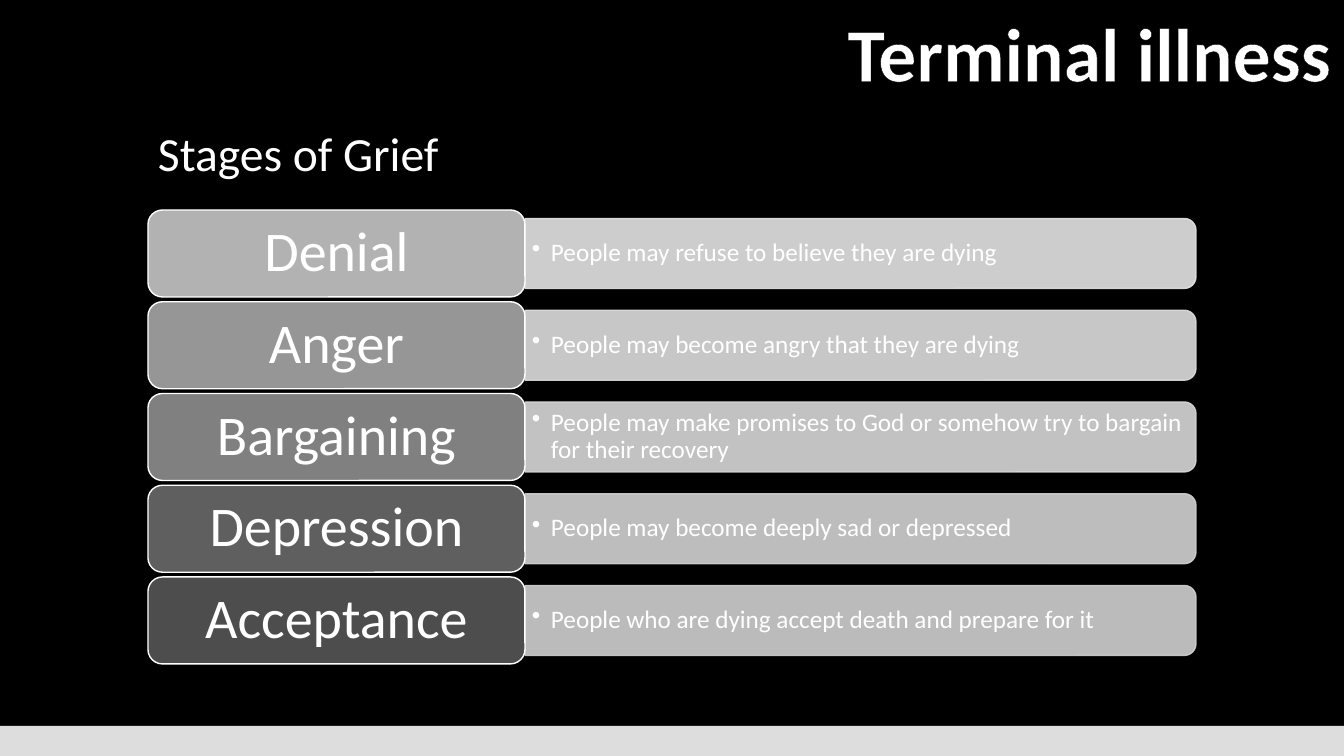
"""Build a slide listing the five stages of grief."""
from lxml import etree
from pptx import Presentation
from pptx.dml.color import RGBColor
from pptx.enum.shapes import MSO_SHAPE
from pptx.enum.text import MSO_ANCHOR, MSO_AUTO_SIZE, PP_ALIGN
from pptx.oxml.ns import qn
from pptx.util import Pt

TITLE = "Terminal illness"
SUBTITLE = "Stages of Grief"
STAGES = [
    ("Denial", "People may refuse to believe they are dying", "B2B2B2", "E4E4E4"),
    ("Anger", "People may become angry that they are dying", "969696", "DDDDDD"),
    ("Bargaining", "People may make promises to God or somehow try to bargain "
     "for their recovery", "808080", "D8D8D8"),
    ("Depression", "People may become deeply sad or depressed", "5F5F5F", "D2D2D2"),
    ("Acceptance", "People who are dying accept death and prepare for it",
     "4D4D4D", "D0D0D0"),
]
FONT, WHITE, BLACK, FOOTER = "Calibri", "FFFFFF", "000000", "DDDDDD"
RECT, ROUND = MSO_SHAPE.RECTANGLE, MSO_SHAPE.ROUNDED_RECTANGLE
BAR = MSO_SHAPE.ROUND_2_SAME_RECTANGLE
LEFT, CENTER = PP_ALIGN.LEFT, PP_ALIGN.CENTER
TOP, MIDDLE, BOTTOM = MSO_ANCHOR.TOP, MSO_ANCHOR.MIDDLE, MSO_ANCHOR.BOTTOM
GROW = MSO_AUTO_SIZE.SHAPE_TO_FIT_TEXT
WIDTH, HEIGHT = 1344, 756
ROWS_TOP, LABEL_X, LABEL_W, LABEL_H = 210, 148, 377, 87
BAR_W, BAR_H, ROW_STEP = 671, 70, 91.75


def px(n):
    return round(n * 914400 / 100.8)


def rgb(color):
    return RGBColor.from_string(color)


def add_shape(kind, x, y, w, h, fill, line=None, alpha=None):
    s = slide.shapes.add_shape(kind, px(x), px(y), px(w), px(h))
    s.shadow.inherit = False
    s.fill.solid()
    s.fill.fore_color.rgb = rgb(fill)
    if line:
        s.line.color.rgb = rgb(line)
        s.line.width = Pt(1)
    else:
        s.line.fill.background()
    if alpha:
        for color in s._element.spPr.iter(qn("a:srgbClr")):
            etree.SubElement(color, qn("a:alpha"), val=str(alpha * 1000))
    return s


def add_box(x, y, w, h):
    return slide.shapes.add_textbox(px(x), px(y), px(w), px(h))


def write(s, text, size, align=LEFT, anchor=MIDDLE, inset=(10, 5), spacing=0.9):
    tf = s.text_frame
    tf.word_wrap = True
    tf.vertical_anchor = anchor
    tf.margin_left = tf.margin_right = px(inset[0])
    tf.margin_top = tf.margin_bottom = px(inset[1])
    p = tf.paragraphs[0]
    p.alignment = align
    p.line_spacing = spacing
    r = p.add_run()
    r.text = text
    r.font.name = FONT
    r.font.size = Pt(size)
    r.font.color.rgb = rgb(WHITE)
    return p, r


def add_bullet(p, indent):
    pPr = p._p.get_or_add_pPr()
    pPr.set("marL", str(px(indent)))
    pPr.set("indent", str(-px(indent)))
    etree.SubElement(pPr, qn("a:buChar"), char="•")


def add_outline(r, color, width):
    ln = etree.Element(qn("a:ln"), w=str(Pt(width)))
    fill = etree.SubElement(ln, qn("a:solidFill"))
    etree.SubElement(fill, qn("a:srgbClr"), val=color)
    r.font._element.insert(0, ln)


def add_stage(y, label, detail, label_fill, bar_fill):
    bar_x = LABEL_X + LABEL_W
    middle = y + LABEL_H / 2
    bar = add_shape(BAR, bar_x + (BAR_W - BAR_H) / 2, middle - BAR_W / 2,
                    BAR_H, BAR_W, bar_fill, bar_fill, 90)
    bar.rotation = 90
    p, r = write(add_box(bar_x, middle - 32, 667, 64), detail, 18, inset=(7, 4))
    add_bullet(p, 19)
    s = add_shape(ROUND, LABEL_X, y, LABEL_W, LABEL_H, label_fill, WHITE)
    write(s, label, 40, CENTER, inset=(21, 12))


prs = Presentation()
prs.slide_width, prs.slide_height = px(WIDTH), px(HEIGHT)
slide = prs.slides.add_slide(prs.slide_layouts[6])
slide.background.fill.solid()
slide.background.fill.fore_color.rgb = rgb(BLACK)

add_shape(RECT, 0, 726, WIDTH, 30, FOOTER)
write(add_box(LABEL_X, 51, 1048, 136), SUBTITLE, 34, anchor=BOTTOM)
for i, stage in enumerate(STAGES):
    add_stage(ROWS_TOP + ROW_STEP * i, *stage)

title = add_box(835, 1, 509, 102)
p, r = write(title, TITLE, 54, CENTER, TOP, spacing=1.0)
title.text_frame.word_wrap = False
title.text_frame.auto_size = GROW
r.font.bold = True
add_outline(r, BLACK, 1.06)

prs.save("out.pptx")
